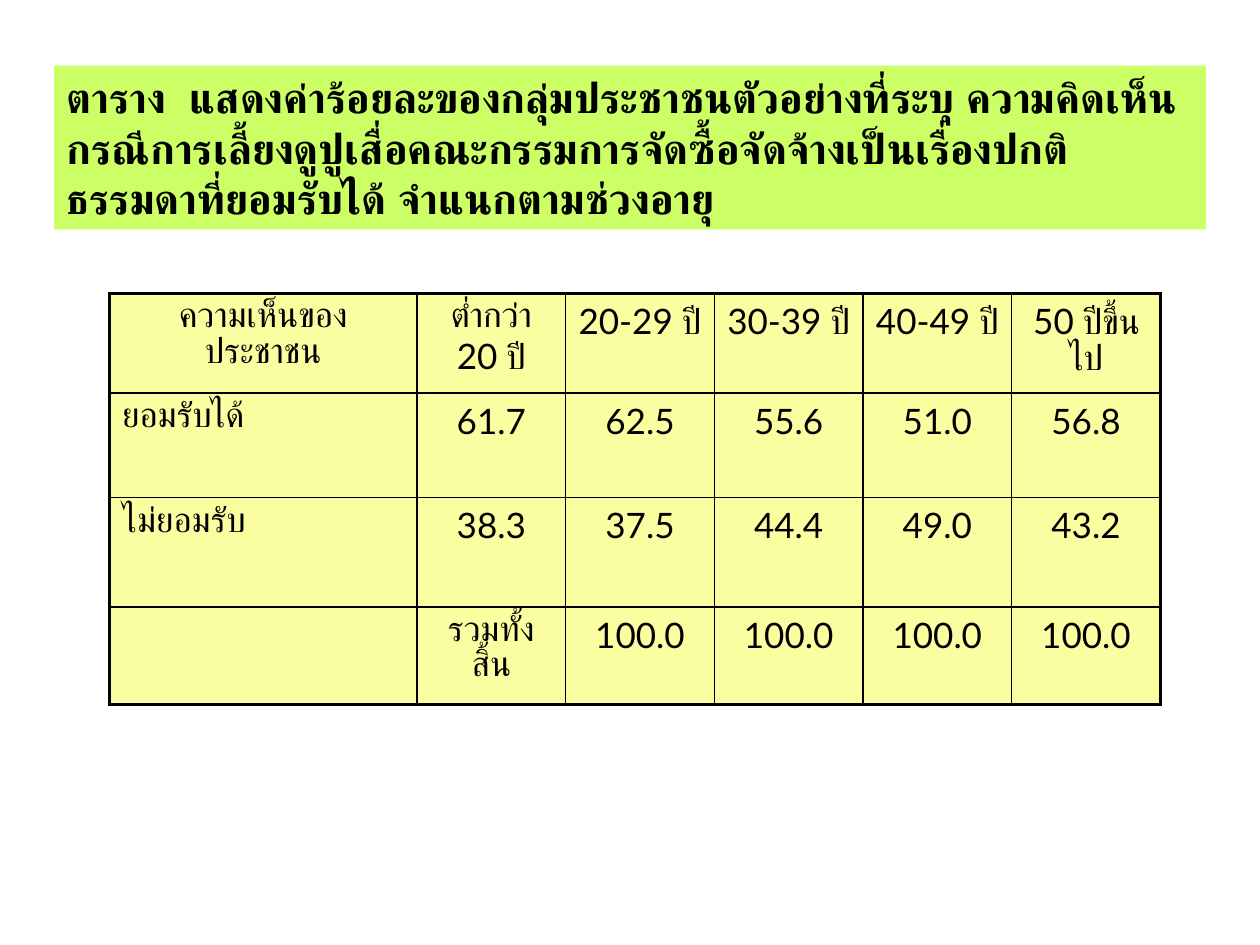
from pptx import Presentation
from pptx.dml.color import RGBColor
from pptx.enum.text import MSO_ANCHOR, MSO_AUTO_SIZE, PP_ALIGN
from pptx.oxml.ns import qn
from pptx.util import Inches, Pt
from lxml.etree import SubElement

# Content
TITLE = ("ตาราง  แสดงค่าร้อยละของกลุ่มประชาชนตัวอย่างที่ระบุ ความคิดเห็น"
         "กรณีการเลี้ยงดูปูเสื่อคณะกรรมการจัดซื้อจัดจ้างเป็นเรื่องปกติ"
         "ธรรมดาที่ยอมรับได้ จำแนกตามช่วงอายุ")
ROWS = [
    ["ความเห็นของประชาชน", "ต่ำกว่า 20 ปี", "20-29 ปี", "30-39 ปี", "40-49 ปี", "50 ปีขึ้นไป"],
    ["ยอมรับได้", "61.7", "62.5", "55.6", "51.0", "56.8"],
    ["ไม่ยอมรับ", "38.3", "37.5", "44.4", "49.0", "43.2"],
    ["", "รวมทั้งสิ้น", "100.0", "100.0", "100.0", "100.0"],
]
COLUMN_WIDTHS = [2.44] + [1.18] * 5
ROW_HEIGHTS = [0.79, 0.83, 0.87, 0.77]
FONT, BLACK, GREEN, YELLOW = "Lato", "000000", "CCFF66", "FBFDA1"
THICK, THIN = 2.25, 1


def paint(fill, color):
    fill.solid()
    fill.fore_color.rgb = RGBColor.from_string(color)


def write(frame, text, size=20, bold=False, align=PP_ALIGN.LEFT, before=20):
    """Write one paragraph; before is the space above in percent of a line."""
    para = frame.paragraphs[0]
    para.alignment = align
    para.line_spacing = 1.0
    spacing = SubElement(para._p.get_or_add_pPr(), qn("a:spcBef"))
    SubElement(spacing, qn("a:spcPct"), val=str(before * 1000))
    span = para.add_run()
    span.text = text
    span.font.name = FONT
    span.font.size = Pt(size)
    span.font.bold = bold
    span.font.color.rgb = RGBColor.from_string(BLACK)


def add_borders(cell, widths):
    """Draw the left, right, top and bottom borders, ahead of the cell's fill."""
    properties = cell._tc.get_or_add_tcPr()
    for place, (side, width) in enumerate(widths.items()):
        line = SubElement(properties, qn(f"a:{side}"), w=str(Pt(width)))
        SubElement(SubElement(line, qn("a:solidFill")), qn("a:srgbClr"), val=BLACK)
        properties.insert(place, line)


deck = Presentation()
deck.slide_width, deck.slide_height = Inches(10), Inches(7.5)
slide = deck.slides.add_slide(deck.slide_layouts[5])

# Title band
title = slide.shapes.title
title.left, title.top = Inches(0.43), Inches(0.52)
title.width, title.height = Inches(9.14), Inches(1.3)
paint(title.fill, GREEN)
frame = title.text_frame
frame.word_wrap = True
frame.auto_size = MSO_AUTO_SIZE.SHAPE_TO_FIT_TEXT
frame.vertical_anchor = MSO_ANCHOR.TOP
write(frame, TITLE, size=24, bold=True, before=50)

# Table of percentages by age group
last_row, last_column = len(ROWS) - 1, len(COLUMN_WIDTHS) - 1
table = slide.shapes.add_table(
    len(ROWS), len(COLUMN_WIDTHS), Inches(0.87), Inches(2.33),
    Inches(sum(COLUMN_WIDTHS)), Inches(sum(ROW_HEIGHTS))).table
for column, width in zip(table.columns, COLUMN_WIDTHS):
    column.width = Inches(width)
for row, height in zip(table.rows, ROW_HEIGHTS):
    row.height = Inches(height)

for r, texts in enumerate(ROWS):
    for c, text in enumerate(texts):
        cell = table.cell(r, c)
        paint(cell.fill, YELLOW)
        add_borders(cell, {
            "lnL": THICK if c == 0 else THIN,
            "lnR": THICK if c == last_column else THIN,
            "lnT": THICK if r == 0 else THIN,
            "lnB": THICK if r == last_row else THIN,
        })
        if text:
            is_label = c == 0 and r > 0
            write(cell.text_frame, text,
                  align=PP_ALIGN.LEFT if is_label else PP_ALIGN.CENTER)

deck.save("out.pptx")
